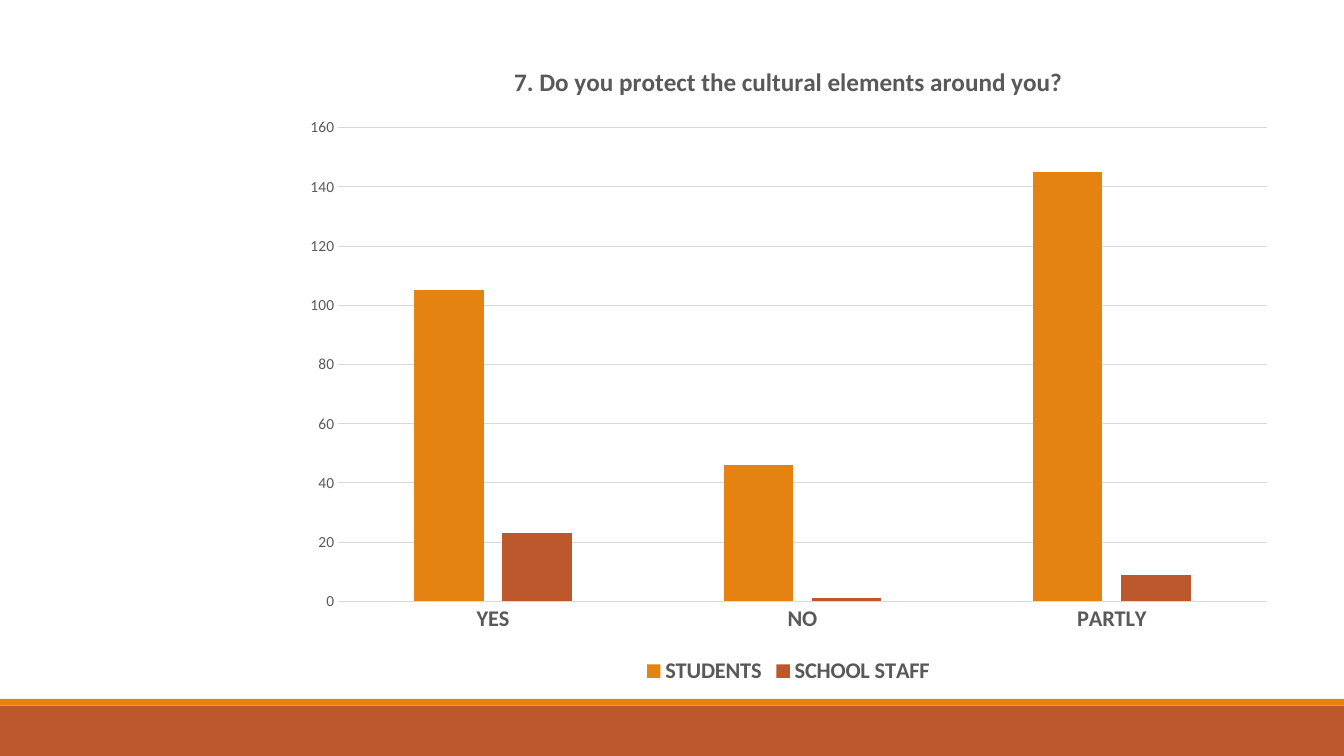
"""Build a survey slide with a clustered column chart above a footer band."""
from pptx import Presentation
from pptx import util as u
from pptx.chart.data import CategoryChartData
from pptx.dml.color import RGBColor
from pptx.enum import chart as ch, shapes

TITLE = "7. Do you protect the cultural elements around you?"
ANSWERS = ["YES", "NO", "PARTLY"]
GROUPS = [
    ("STUDENTS", [105, 46, 145], "E48312"),
    ("SCHOOL STAFF", [23, 1, 9], "BD582C"),
]
THEME = dict(font="Calibri", text="595959", rule="D9D9D9", rule_width=0.75,
             title=18, label=16, tick=11)
SLIDE_W, SLIDE_H = 33.87, 19.05
FOOTER_H, STRIPE_H = 1.27, 0.17
BANDS = [
    (SLIDE_H - FOOTER_H, FOOTER_H, "BD582C"),
    (SLIDE_H - FOOTER_H - STRIPE_H, STRIPE_H, "E48312"),
]
CHART_BOX = (7.32, 1.04, 25.1, 16.33)


def paint(fill, color):
    fill.solid()
    fill.fore_color.rgb = RGBColor.from_string(color)


def style_font(font, size, bold):
    font.name = THEME["font"]
    font.size = u.Pt(size)
    font.bold = bold
    font.color.rgb = RGBColor.from_string(THEME["text"])


def style_rule(line):
    line.color.rgb = RGBColor.from_string(THEME["rule"])
    line.width = u.Pt(THEME["rule_width"])


def add_band(s, top, height, color):
    sp = s.shapes.add_shape(shapes.MSO_SHAPE.RECTANGLE, 0, u.Cm(top),
                            u.Cm(SLIDE_W), u.Cm(height))
    sp.shadow.inherit = False
    paint(sp.fill, color)
    sp.line.fill.background()


def add_survey_chart(s):
    data = CategoryChartData()
    data.categories = ANSWERS
    for name, values, _ in GROUPS:
        data.add_series(name, values)
    chart = s.shapes.add_chart(ch.XL_CHART_TYPE.COLUMN_CLUSTERED,
                               *map(u.Cm, CHART_BOX), data).chart
    style_font(chart.font, THEME["tick"], False)

    chart.has_title = True
    r = chart.chart_title.text_frame.paragraphs[0].add_run()
    r.text = TITLE
    style_font(r.font, THEME["title"], True)
    chart.chart_title.include_in_layout = False

    chart.has_legend = True
    chart.legend.position = ch.XL_LEGEND_POSITION.BOTTOM
    chart.legend.include_in_layout = False
    style_font(chart.legend.font, THEME["label"], True)

    plot = chart.plots[0]
    plot.gap_width, plot.overlap = 219, -27
    plot.vary_by_categories = False
    for series, (_, _, color) in zip(plot.series, GROUPS):
        paint(series.format.fill, color)
        series.invert_if_negative = False

    cat, val = chart.category_axis, chart.value_axis
    for axis, size, bold in ((cat, THEME["label"], True),
                             (val, THEME["tick"], False)):
        axis.major_tick_mark = axis.minor_tick_mark = ch.XL_TICK_MARK.NONE
        style_font(axis.tick_labels.font, size, bold)
    style_rule(cat.format.line)
    val.minimum_scale, val.maximum_scale, val.major_unit = 0, 160, 20
    val.format.line.fill.background()
    val.has_major_gridlines = True
    style_rule(val.major_gridlines.format.line)


def main():
    prs = Presentation()
    prs.slide_width, prs.slide_height = u.Cm(SLIDE_W), u.Cm(SLIDE_H)
    s = prs.slides.add_slide(prs.slide_layouts[6])
    for band in BANDS:
        add_band(s, *band)
    add_survey_chart(s)
    prs.save("out.pptx")


if __name__ == "__main__":
    main()
